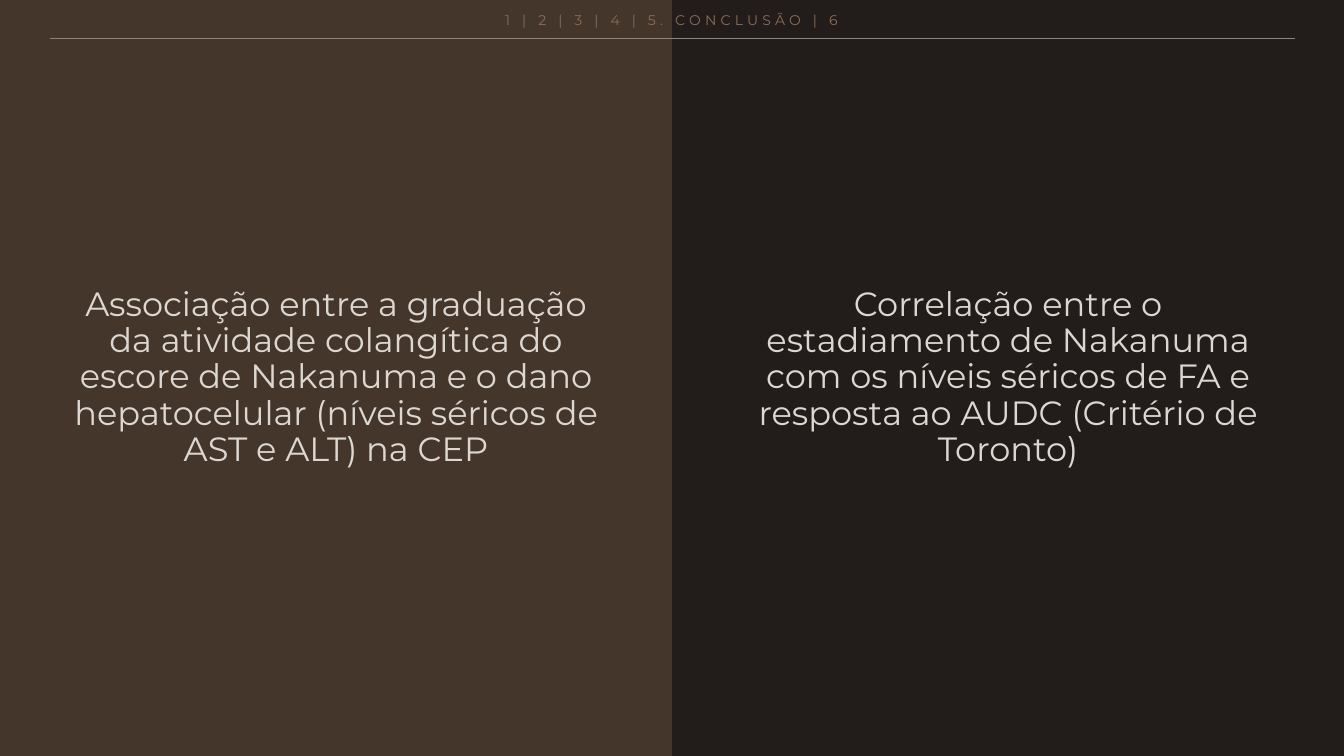
from lxml import etree
from pptx import Presentation
from pptx.dml.color import RGBColor
from pptx.enum import shapes, text
from pptx.oxml.ns import qn
from pptx.util import Inches, Pt

SAND = RGBColor(0xE8, 0xE0, 0xDA)
DARK = RGBColor(0x22, 0x1D, 0x1A)
BROWN = RGBColor(0x45, 0x36, 0x2B)
PALE = RGBColor(0xDD, 0xD7, 0xD2)
TAN = RGBColor(0x8B, 0x6D, 0x56)
RULE = RGBColor(0x93, 0x81, 0x77)

WIDTH, HEIGHT = 13.33, 7.5
HALF = WIDTH / 2


def write(frame, words, size, color):
    """Fill a frame with one centred paragraph and return its run."""
    frame.word_wrap = True
    frame.vertical_anchor = text.MSO_ANCHOR.MIDDLE
    frame.text = words
    para = frame.paragraphs[0]
    para.alignment = text.PP_ALIGN.CENTER
    para.line_spacing = 0.9
    run = para.runs[0]
    run.font.name = "Montserrat"
    run.font.size = Pt(size)
    run.font.color.rgb = color
    return run


deck = Presentation()
deck.slide_width = Inches(WIDTH)
deck.slide_height = Inches(HEIGHT)
slide = deck.slides.add_slide(deck.slide_layouts[6])
slide.background.fill.solid()
slide.background.fill.fore_color.rgb = SAND

# Two half-slide panels
panels = [
    (HALF, DARK, "Correlação entre o estadiamento de Nakanuma com os níveis "
                 "séricos de FA e resposta ao AUDC (Critério de Toronto)"),
    (0, BROWN, "Associação entre a graduação da atividade colangítica do "
               "escore de Nakanuma e o dano hepatocelular (níveis séricos "
               "de AST e ALT) na CEP"),
]
for left, fill, words in panels:
    panel = slide.shapes.add_shape(
        shapes.MSO_SHAPE.RECTANGLE,
        Inches(left), 0, Inches(HALF), Inches(HEIGHT))
    panel.shadow.inherit = False
    panel.fill.solid()
    panel.fill.fore_color.rgb = fill
    panel.line.fill.background()
    frame = panel.text_frame
    frame.margin_left = frame.margin_right = Inches(0.67)
    frame.margin_top = frame.margin_bottom = Inches(0.12)
    write(frame, words, 24, PALE)

# Section tracker and the rule below it
tracker = slide.shapes.add_textbox(
    Inches(0.49), Inches(0.08), Inches(12.34), Inches(0.25))
run = write(tracker.text_frame, "1 | 2 | 3 | 4 | 5. CONCLUSÃO | 6", 10, TAN)
run.font._element.set("spc", "300")

rule = slide.shapes.add_connector(
    shapes.MSO_CONNECTOR.STRAIGHT,
    Inches(0.5), Inches(0.38), Inches(12.84), Inches(0.38))
rule.line.color.rgb = RULE
rule.line.width = Pt(0.25)
etree.SubElement(rule._element.spPr, qn("a:effectLst"))

deck.save("out.pptx")
